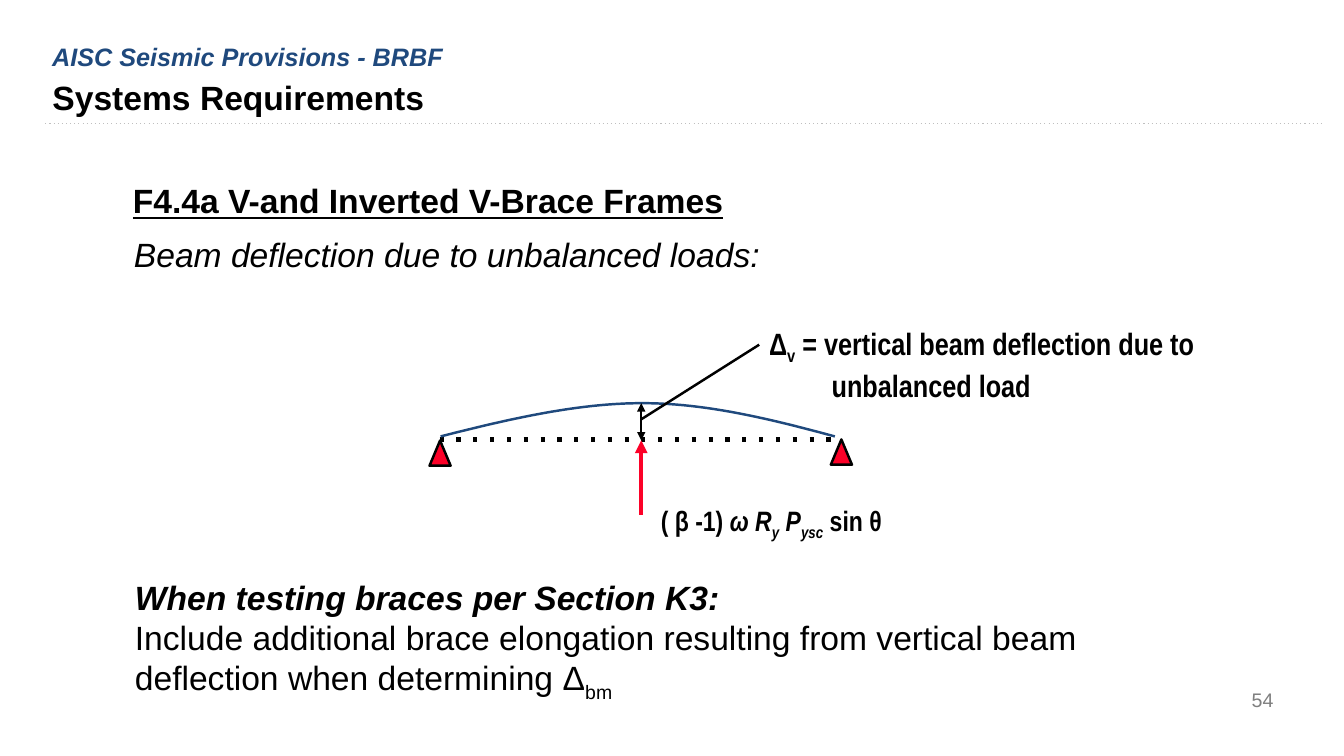
from dataclasses import dataclass

from lxml.etree import SubElement
from pptx import Presentation
from pptx.dml.color import RGBColor
from pptx.enum.shapes import MSO_CONNECTOR, MSO_SHAPE
from pptx.enum.text import MSO_ANCHOR, MSO_AUTO_SIZE, PP_ALIGN
from pptx.oxml.ns import qn
from pptx.util import Inches, Pt


@dataclass(frozen=True)
class Theme:
    sans: str = "Arial"
    narrow: str = "Arial Narrow"
    black: RGBColor = RGBColor(0, 0, 0)
    navy: RGBColor = RGBColor(0x1F, 0x49, 0x7D)
    red: RGBColor = RGBColor(0xFC, 0x01, 0x28)
    gray: RGBColor = RGBColor(0x7F, 0x7F, 0x7F)
    rule: RGBColor = RGBColor(0xBF, 0xBF, 0xBF)
    body: int = 24
    label: int = 22
    formula: int = 20
    kicker: int = 18
    number: int = 14
    thin: float = 0.75
    medium: float = 1.75
    thick: float = 3


THEME = Theme()


def place(shape, left, top, width, height):
    shape.left, shape.top = Inches(left), Inches(top)
    shape.width, shape.height = Inches(width), Inches(height)


def write(box, spans, size, font=THEME.sans, color=THEME.black, bold=None,
          italic=None, underline=None, align=PP_ALIGN.LEFT,
          anchor=MSO_ANCHOR.TOP, hanging=0):
    """Fill a box with one paragraph; spans are (text, style) pairs."""
    frame = box.text_frame
    frame.word_wrap = True
    frame.auto_size = MSO_AUTO_SIZE.NONE
    frame.vertical_anchor = anchor
    para = frame.paragraphs[0]
    para.alignment = align
    if hanging:
        properties = para._p.get_or_add_pPr()
        properties.set("marL", str(Inches(hanging)))
        properties.set("indent", str(-Inches(hanging)))
    face = para.font
    face.name, face.size, face.color.rgb = font, Pt(size), color
    face.bold, face.italic, face.underline = bold, italic, underline
    for text, style in spans:
        if text == "\n":
            para.add_line_break()
            continue
        span = para.add_run()
        span.text = text
        if "bold" in style:
            span.font.bold = True
        if "italic" in style:
            span.font.italic = True
        if "sub" in style:
            span.font._element.set("baseline", "-25000")


def add_text(page, area, spans, size, **style):
    box = page.shapes.add_textbox(*map(Inches, area))
    write(box, spans, size, **style)


def add_line(page, start, end, color, width, dotted=False, heads=()):
    line = page.shapes.add_connector(
        MSO_CONNECTOR.STRAIGHT, *map(Inches, start + end))
    line.line.color.rgb = color
    line.line.width = Pt(width)
    outline = line.line._get_or_add_ln()
    if dotted:
        SubElement(outline, qn("a:prstDash"), val="dot")
    for head in heads:
        SubElement(outline, qn(f"a:{head}"), type="triangle")
    SubElement(line._element.spPr, qn("a:effectLst"))


def add_support(page, left, top):
    support = page.shapes.add_shape(
        MSO_SHAPE.ISOSCELES_TRIANGLE,
        *map(Inches, (left, top, 0.21, 0.25)))
    support.shadow.inherit = False
    support.fill.solid()
    support.fill.fore_color.rgb = THEME.red
    support.line.color.rgb = THEME.black
    support.line.width = Pt(THEME.medium)


def add_curve(page, pieces, steps=24):
    """Draw cubic Bezier pieces, each given by its four points, as one line."""
    points = []
    for a, b, c, d in pieces:
        for step in range(steps + 1):
            t = step / steps
            u = 1 - t
            points.append(tuple(
                Inches(u**3 * p + 3 * u * u * t * q + 3 * u * t * t * r + t**3 * s)
                for p, q, r, s in zip(a, b, c, d)))
    builder = page.shapes.build_freeform(*points[0])
    builder.add_line_segments(points[1:], close=False)
    curve = builder.convert_to_shape()
    curve.shadow.inherit = False
    curve.fill.background()
    curve.line.color.rgb = THEME.navy
    curve.line.width = Pt(THEME.medium)


def add_header(page):
    add_line(page, (0.45, 1.23), (13.12, 1.23), THEME.rule, THEME.thin, dotted=True)
    title = page.shapes.title
    place(title, 0.42, 0.71, 11.97, 0.44)
    write(title, [("Systems Requirements", "")], THEME.body, bold=True)
    add_text(page, (0.42, 0.36, 11.97, 0.31),
             [("AISC Seismic Provisions - BRBF", "")], THEME.kicker,
             color=THEME.navy, bold=True, italic=True)
    add_text(page, (9.62, 6.74, 3.11, 0.4), [("54", "")], THEME.number,
             color=THEME.gray, align=PP_ALIGN.RIGHT, anchor=MSO_ANCHOR.MIDDLE)


def add_beam_diagram(page):
    middle, half_span, base, crown = 6.36, 2, 4.36, 4.0

    # Undeflected beam and its supports
    for start in (middle - half_span, middle):
        add_line(page, (start, base), (start + half_span, base),
                 THEME.black, THEME.thick, dotted=True)
    add_support(page, 4.26, 4.37)
    add_support(page, 8.24, 4.36)

    # Unbalanced load
    add_line(page, (middle, 4.37), (middle, 5.11), THEME.red, THEME.thick,
             heads=["headEnd"])
    add_text(page, (6.19, 4.95, 2.92, 0.44),
             [("( β -1) ", ""), ("ω R", "italic"), ("y", "italic sub"),
              (" P", "italic"), ("ysc", "italic sub"), (" sin θ", "")],
             THEME.formula, font=THEME.narrow, bold=True, align=PP_ALIGN.CENTER)

    # Deflected beam, its rise and the label
    add_curve(page, [
        ((4.37, 4.33), (5.04, 4.16), (5.72, crown), (6.37, crown)),
        ((6.37, crown), (7.01, crown), (7.65, 4.16), (8.28, 4.33))])
    add_line(page, (middle, crown), (middle, 4.37), THEME.black, THEME.medium,
             heads=["headEnd", "tailEnd"])
    add_line(page, (middle, 4.16), (7.53, 3.42), THEME.black, THEME.medium)
    add_text(page, (7.53, 3.17, 4.86, 0.84),
             [("Δ", ""), ("v", "sub"),
              (" = vertical beam deflection due to unbalanced load", "")],
             THEME.label, font=THEME.narrow, bold=True, hanging=0.62)


def main():
    deck = Presentation()
    deck.slide_width, deck.slide_height = Inches(13.33), Inches(7.5)
    page = deck.slides.add_slide(deck.slide_layouts[5])

    add_header(page)
    add_text(page, (1.22, 1.74, 11.67, 0.5),
             [("F4.4a V-and Inverted V-Brace Frames", "")], THEME.body,
             bold=True, underline=True)
    add_text(page, (1.23, 2.27, 9.62, 0.5),
             [("Beam deflection due to unbalanced loads:", "")], THEME.body,
             italic=True)
    add_beam_diagram(page)
    add_text(page, (1.24, 5.67, 10.86, 1.31),
             [("When testing braces per Section K3:", "bold italic"), ("\n", ""),
              ("Include additional brace elongation resulting from vertical "
               "beam deflection when determining Δ", ""), ("bm", "sub")],
             THEME.body)

    deck.save("out.pptx")


if __name__ == "__main__":
    main()
